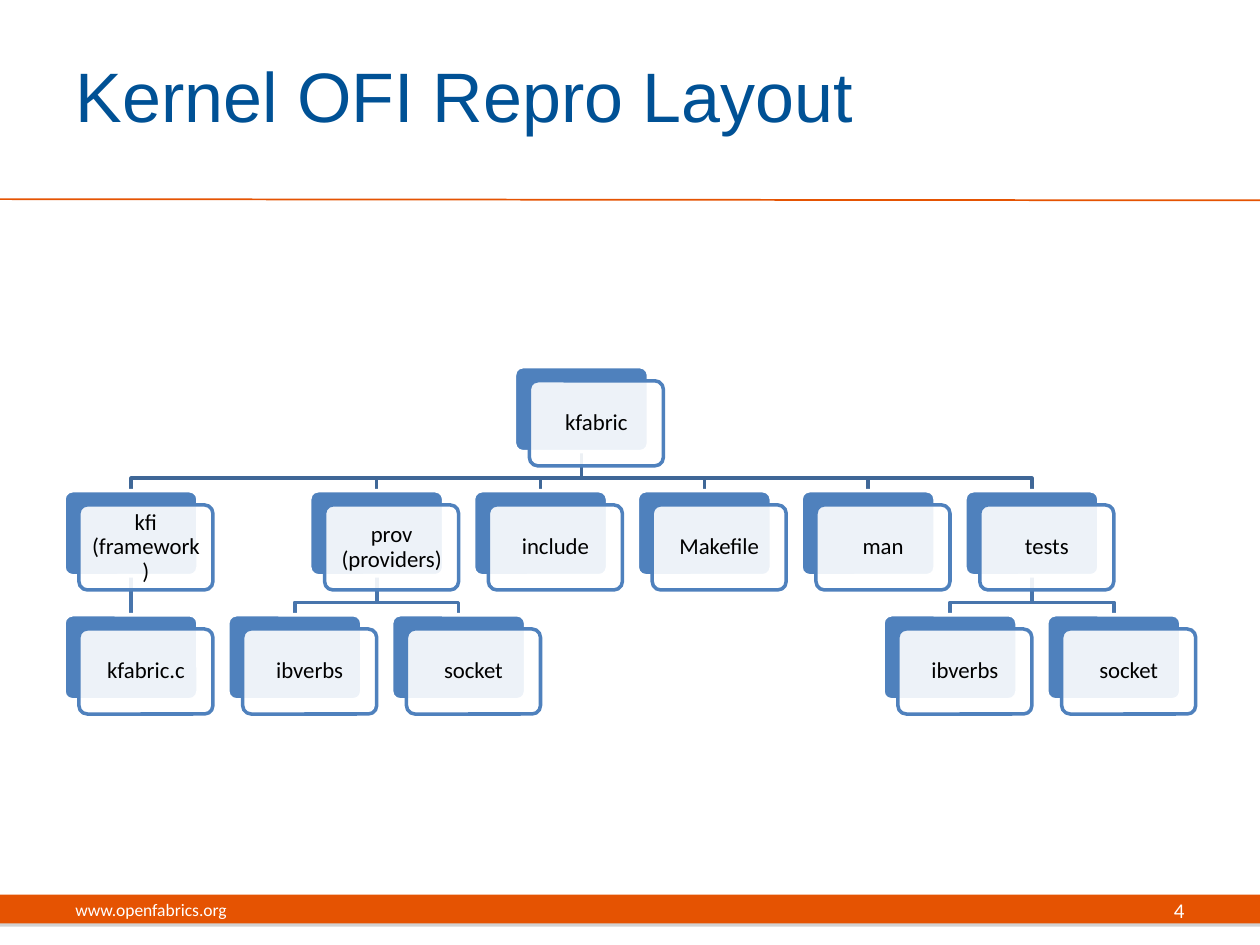
"""Build the Kernel OFI repository layout slide as a tree of cards."""
from dataclasses import dataclass

import pptx
import pptx.dml.color
import pptx.enum.shapes
import pptx.enum.text
import pptx.oxml
import pptx.oxml.ns
import pptx.util

Pt = pptx.util.Pt
RGB = pptx.dml.color.RGBColor.from_string
Shape = pptx.enum.shapes.MSO_SHAPE
Anchor = pptx.enum.text.MSO_ANCHOR
Align = pptx.enum.text.PP_ALIGN
qn = pptx.oxml.ns.qn
DRAWING = pptx.oxml.ns.nsdecls("a")


@dataclass(frozen=True)
class Theme:
    orange: str = "E55302"
    title: str = "005195"
    card: str = "4F81BD"
    links: tuple = ("3F6797", "4875AC")
    white: str = "FFFFFF"
    black: str = "000000"
    heading_font: str = "Arial"
    body_font: str = "Calibri"
    title_size: int = 40
    card_size: int = 13
    address_size: int = 10
    number_size: int = 12


theme = Theme()


def write(shape, text, size, color, align, font=theme.body_font):
    frame = shape.text_frame
    frame.text = text
    frame.word_wrap = True
    frame.vertical_anchor = Anchor.MIDDLE
    paragraph = frame.paragraphs[0]
    paragraph.alignment = align
    run_font = paragraph.runs[0].font
    run_font.name, run_font.size = font, Pt(size)
    run_font.color.rgb = RGB(color)


def add_card(left, top, fill, outline):
    card = slide.shapes.add_shape(
        Shape.ROUNDED_RECTANGLE, Pt(left), Pt(top), Pt(CARD_WIDTH), Pt(CARD_HEIGHT))
    card.adjustments[0] = 0.1
    card.shadow.inherit = False
    card.fill.solid()
    card.fill.fore_color.rgb = RGB(fill)
    card.line.color.rgb = RGB(outline)
    card.line.width = Pt(2)
    return card


deck = pptx.Presentation()
deck.slide_width, deck.slide_height = Pt(720), Pt(540)
slide = deck.slides.add_slide(deck.slide_layouts[5])

title = slide.shapes.title
title.left, title.top, title.width, title.height = Pt(36), Pt(18), Pt(588), Pt(72)
write(title, "Kernel OFI Repro Layout", theme.title_size, theme.title,
      Align.LEFT, theme.heading_font)

footer_bar = slide.shapes.add_shape(Shape.RECTANGLE, 0, Pt(511.2), Pt(720), Pt(16.5))
footer_bar.fill.solid()
footer_bar.fill.fore_color.rgb = RGB(theme.orange)
footer_bar.line.fill.background()
footer_bar.element.spPr.append(pptx.oxml.parse_xml(
    f'<a:effectLst {DRAWING}><a:outerShdw blurRad="0" dist="22860" dir="5400000">'
    '<a:srgbClr val="808080"><a:alpha val="35000"/></a:srgbClr>'
    '</a:outerShdw></a:effectLst>'))

STRAIGHT = pptx.enum.shapes.MSO_CONNECTOR.STRAIGHT
title_rule = slide.shapes.add_connector(STRAIGHT, 0, Pt(113.8), Pt(720), Pt(114.5))
title_rule.line.color.rgb = RGB(theme.orange)
title_rule.line.width = Pt(1)
title_rule.element.spPr.append(pptx.oxml.parse_xml(f"<a:effectLst {DRAWING}/>"))

CARD_WIDTH, CARD_HEIGHT = 76.6, 48.6
TREE_LEFT, TREE_TOP = 36.6, 209.5
COLUMN_PITCH, LEVEL_PITCH = 93.6, 70.9
FRONT_OFFSET_X, FRONT_OFFSET_Y = 8.5, 8.1
BEND_DROP = 15.2

# label, column, level, index of parent
tree = [
    ("kfabric", 2.75, 0, None),
    ("kfi (framework)", 0, 1, 0),
    ("kfabric.c", 0, 2, 1),
    ("prov (providers)", 1.5, 1, 0),
    ("ibverbs", 1, 2, 3),
    ("socket", 2, 2, 3),
    ("include", 2.5, 1, 0),
    ("Makefile", 3.5, 1, 0),
    ("man", 4.5, 1, 0),
    ("tests", 5.5, 1, 0),
    ("ibverbs", 5, 2, 9),
    ("socket", 6, 2, 9),
]

back_cards = []
for label, column, level, parent in tree:
    left = TREE_LEFT + column * COLUMN_PITCH
    top = TREE_TOP + level * LEVEL_PITCH
    back_cards.append(add_card(left, top, theme.card, theme.white))
    front = add_card(left + FRONT_OFFSET_X, top + FRONT_OFFSET_Y, theme.white, theme.card)
    front_color = front.element.spPr.find(qn("a:solidFill"))[0]
    front_color.append(pptx.oxml.parse_xml(f'<a:alpha {DRAWING} val="90000"/>'))
    write(front, label, theme.card_size, theme.black, Align.CENTER)
    frame = front.text_frame
    frame.margin_left = frame.margin_right = Pt(5)
    frame.margin_top = frame.margin_bottom = Pt(5)
    frame.paragraphs[0].line_spacing = 0.9

for child, (label, column, level, parent) in enumerate(tree):
    if parent is None:
        continue
    upper, lower = back_cards[parent], back_cards[child]
    start_x, end_x = (card.left + card.width // 2 for card in (upper, lower))
    start_y, end_y = upper.top + upper.height, lower.top
    if column == tree[parent][1]:
        link = slide.shapes.add_connector(STRAIGHT, start_x, start_y, end_x, end_y)
        link.begin_connect(upper, 2)
        link.end_connect(lower, 0)
        link.element.spPr.append(pptx.oxml.parse_xml(f"<a:effectLst {DRAWING}/>"))
    else:
        bend_y = start_y + Pt(BEND_DROP)
        outline = slide.shapes.build_freeform(start_x, start_y)
        outline.add_line_segments(
            [(start_x, bend_y), (end_x, bend_y), (end_x, end_y)], close=False)
        link = outline.convert_to_shape()
        link.fill.background()
        link.shadow.inherit = False
    link.line.color.rgb = RGB(theme.links[level - 1])
    link.line.width = Pt(2)
    back_cards[0].element.addprevious(link.element)

for text, left, width, size, align in [
    ("www.openfabrics.org", 36, 228, theme.address_size, Align.LEFT),
    ("4", 516, 168, theme.number_size, Align.RIGHT),
]:
    footer_text = slide.shapes.add_textbox(Pt(left), Pt(505.5), Pt(width), Pt(28.8))
    write(footer_text, text, size, theme.white, align)

deck.save("out.pptx")
